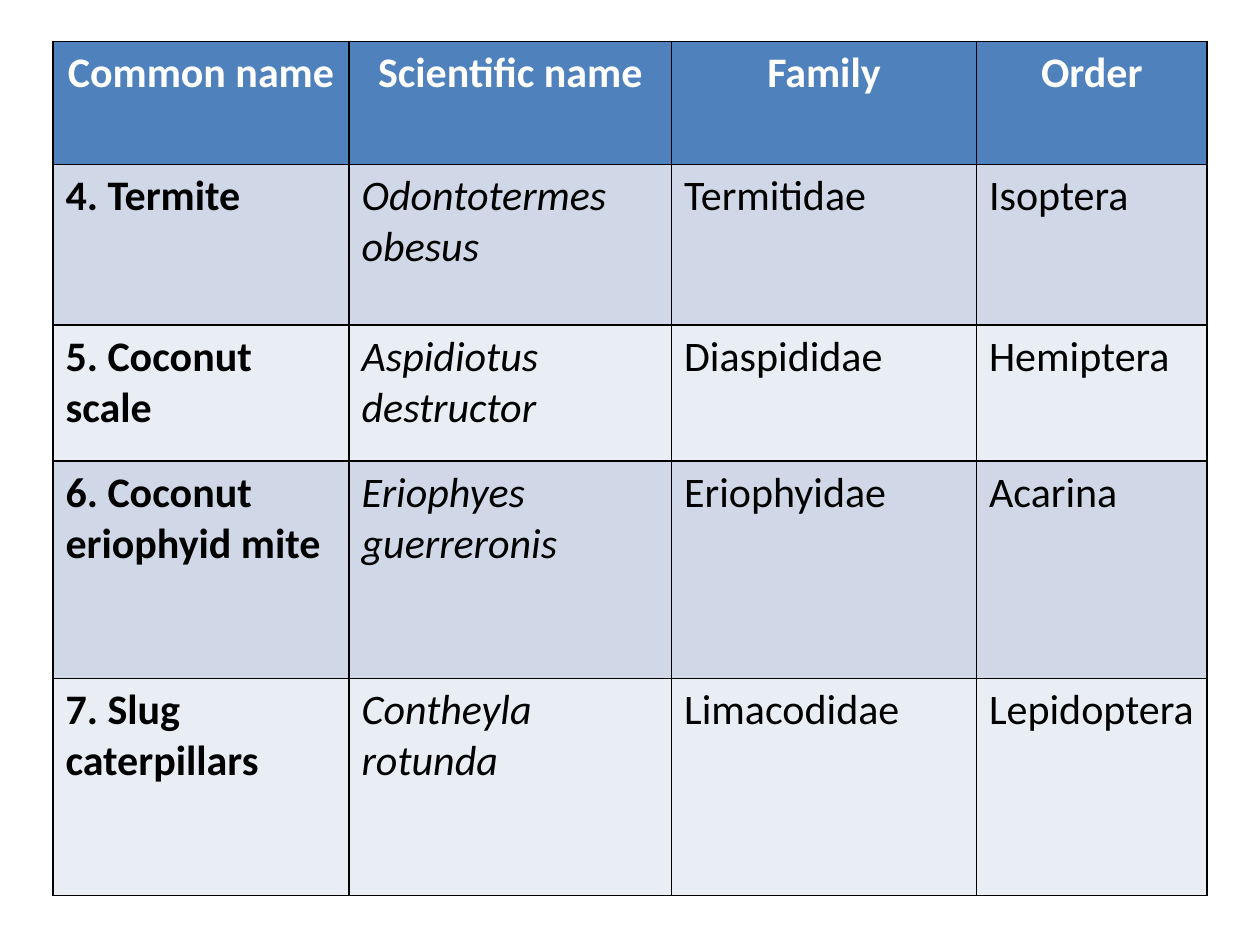
from lxml.etree import SubElement
from pptx import Presentation
from pptx.dml.color import RGBColor
from pptx.enum.text import PP_ALIGN
from pptx.oxml.ns import qn
from pptx.util import Inches, Pt

COLUMNS = [23.5, 25.6, 24.2, 18.3]
ROWS = [13, 17, 14.4, 23, 23]
PESTS = [
    ["Common name", "Scientific name", "Family", "Order"],
    ["4. Termite", "Odontotermes obesus", "Termitidae", "Isoptera"],
    ["5. Coconut scale", "Aspidiotus destructor", "Diaspididae", "Hemiptera"],
    ["6. Coconut eriophyid mite", "Eriophyes guerreronis", "Eriophyidae", "Acarina"],
    ["7. Slug caterpillars", "Contheyla rotunda", "Limacodidae", "Lepidoptera"],
]


def color(value):
    return RGBColor.from_string(value)


class Deck:
    font = {"name": "Calibri", "size": Pt(24)}
    header_fill = "4F81BD"
    band_fills = ["D0D8E8", "E9EDF4"]
    border = "000000"

    def __init__(self, width, height):
        self.prs = Presentation()
        self.prs.slide_width = Inches(width)
        self.prs.slide_height = Inches(height)
        self.s = self.prs.slides.add_slide(self.prs.slide_layouts[6])

    def x(self, percent):
        return round(self.prs.slide_width * percent / 100)

    def y(self, percent):
        return round(self.prs.slide_height * percent / 100)

    def borders(self, cell):
        tcPr = cell._tc.get_or_add_tcPr()
        for i, side in enumerate(["lnL", "lnR", "lnT", "lnB"]):
            ln = tcPr.makeelement(qn(f"a:{side}"), {"w": str(Pt(1))})
            fill = SubElement(ln, qn("a:solidFill"))
            SubElement(fill, qn("a:srgbClr"), val=self.border)
            tcPr.insert(i, ln)

    def cell(self, cell, text, fill, align, **style):
        cell.fill.solid()
        cell.fill.fore_color.rgb = color(fill)
        self.borders(cell)
        p = cell.text_frame.paragraphs[0]
        p.alignment = align
        r = p.add_run()
        r.text = text
        ink = style.pop("ink")
        for key, value in {**self.font, **style}.items():
            setattr(r.font, key, value)
        r.font.color.rgb = color(ink)

    def table(self, left, top, columns, rows, data):
        table = self.s.shapes.add_table(
            len(rows), len(columns), self.x(left), self.y(top),
            self.x(sum(columns)), self.y(sum(rows))).table
        for column, width in zip(table.columns, columns):
            column.width = self.x(width)
        for row, height in zip(table.rows, rows):
            row.height = self.y(height)
        for i, texts in enumerate(data):
            header = i == 0
            fill = self.header_fill if header else self.band_fills[(i - 1) % 2]
            for j, text in enumerate(texts):
                self.cell(
                    table.cell(i, j), text, fill,
                    PP_ALIGN.CENTER if header else PP_ALIGN.LEFT,
                    bold=header or j == 0,
                    italic=not header and j == 1,
                    ink="FFFFFF" if header else "000000")


def main():
    deck = Deck(10, 7.5)
    deck.table(4.2, 4.4, COLUMNS, ROWS, PESTS)
    deck.prs.save("out.pptx")


if __name__ == "__main__":
    main()
